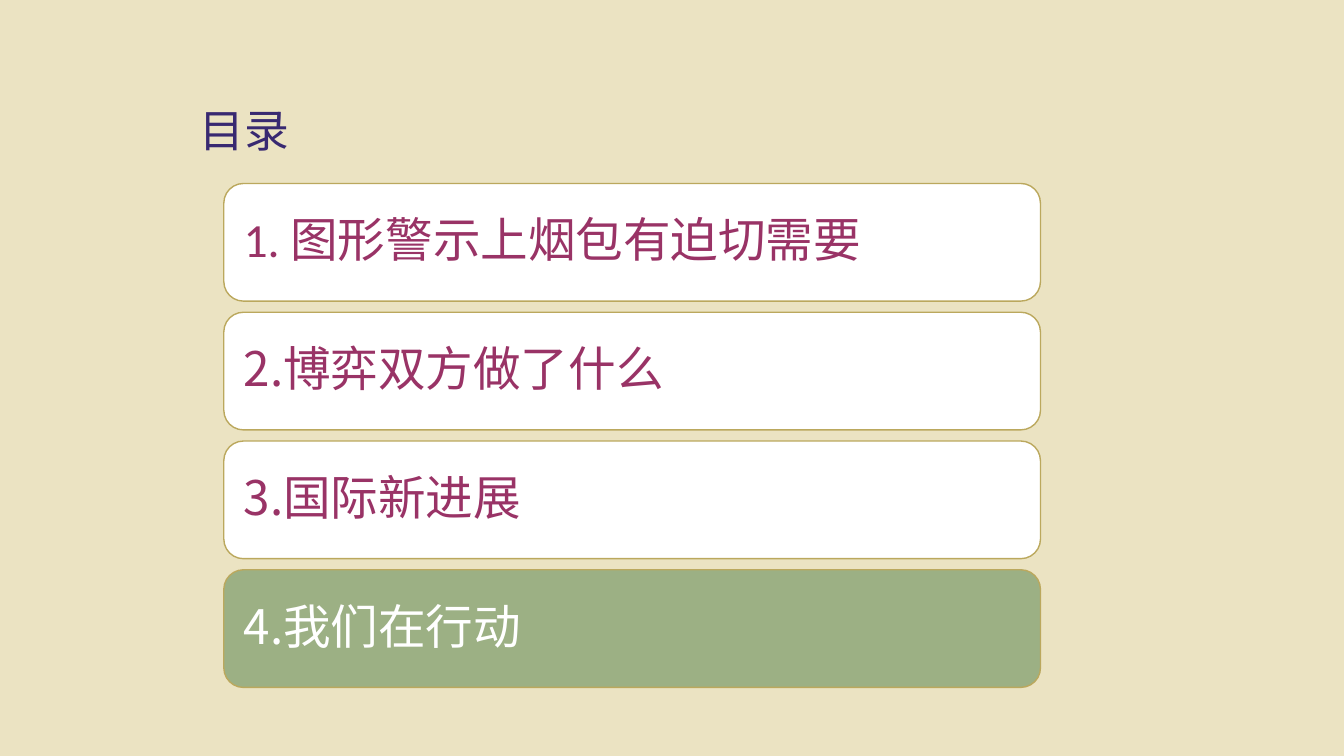
from lxml import etree
from pptx import Presentation
from pptx.dml.color import RGBColor
from pptx.enum import shapes, text
from pptx.oxml.ns import qn
from pptx.util import Inches, Pt

CJK_FONT = "Noto Sans CJK SC"
LATIN_FONT = "Calibri"
BACKGROUND, TITLE, BORDER = "EBE3C2", "382971", "BBA85D"
WHITE, GREEN, PLUM = "FFFFFF", "9CB084", "993366"

# Each entry: runs of (text, font), fill, text colour
ENTRIES = [
    ([("1.", LATIN_FONT), (" 图形警示上烟包有迫切需要", CJK_FONT)], WHITE, PLUM),
    ([("2.博弈双方做了什么", CJK_FONT)], WHITE, PLUM),
    ([("3.国际新进展", CJK_FONT)], WHITE, PLUM),
    ([("4.我们在行动", CJK_FONT)], GREEN, WHITE),
]


def rgb(value):
    return RGBColor.from_string(value)


def format_run(run, font_name, size, colour):
    """Style a run, naming the font for both Latin and East Asian text."""
    run.font.size = Pt(size)
    run.font.color.rgb = rgb(colour)
    run.font.name = font_name
    east_asian = etree.SubElement(run.font._element, qn("a:ea"))
    east_asian.set("typeface", font_name)


def add_title(slide, left, top, width, height):
    box = slide.shapes.add_textbox(Inches(left), Inches(top), Inches(width), Inches(height))
    frame = box.text_frame
    frame.word_wrap = False
    frame.auto_size = text.MSO_AUTO_SIZE.SHAPE_TO_FIT_TEXT
    frame.text = "目录"
    format_run(frame.paragraphs[0].runs[0], CJK_FONT, 32, TITLE)


def add_entry(slide, left, top, width, height, parts, fill, colour):
    shape = slide.shapes.add_shape(
        shapes.MSO_SHAPE.ROUNDED_RECTANGLE,
        Inches(left), Inches(top), Inches(width), Inches(height))
    shape.shadow.inherit = False
    shape.fill.solid()
    shape.fill.fore_color.rgb = rgb(fill)
    shape.line.color.rgb = rgb(BORDER)
    shape.line.width = Pt(1)

    frame = shape.text_frame
    frame.word_wrap = True
    frame.vertical_anchor = text.MSO_ANCHOR.MIDDLE
    frame.margin_left = frame.margin_right = Inches(0.14)
    frame.margin_top = frame.margin_bottom = Inches(0.14)
    paragraph = frame.paragraphs[0]
    paragraph.alignment = text.PP_ALIGN.LEFT
    paragraph.line_spacing = 0.9
    for content, font_name in parts:
        run = paragraph.add_run()
        run.text = content
        format_run(run, font_name, 34, colour)


def add_contents(slide, left, top, width, height, gap=0.11):
    """Stack the entries at equal heights in the given box."""
    entry_height = (height - gap * (len(ENTRIES) - 1)) / len(ENTRIES)
    for index, (parts, fill, colour) in enumerate(ENTRIES):
        entry_top = top + index * (entry_height + gap)
        add_entry(slide, left, entry_top, width, entry_height, parts, fill, colour)


def main():
    presentation = Presentation()
    presentation.slide_width = Inches(13.33)
    presentation.slide_height = Inches(7.5)
    slide = presentation.slides.add_slide(presentation.slide_layouts[6])
    slide.background.fill.solid()
    slide.background.fill.fore_color.rgb = rgb(BACKGROUND)
    add_contents(slide, 2.22, 1.82, 8.1, 5)
    add_title(slide, 1.88, 0.97, 1.1, 0.64)
    presentation.save("out.pptx")


if __name__ == "__main__":
    main()
